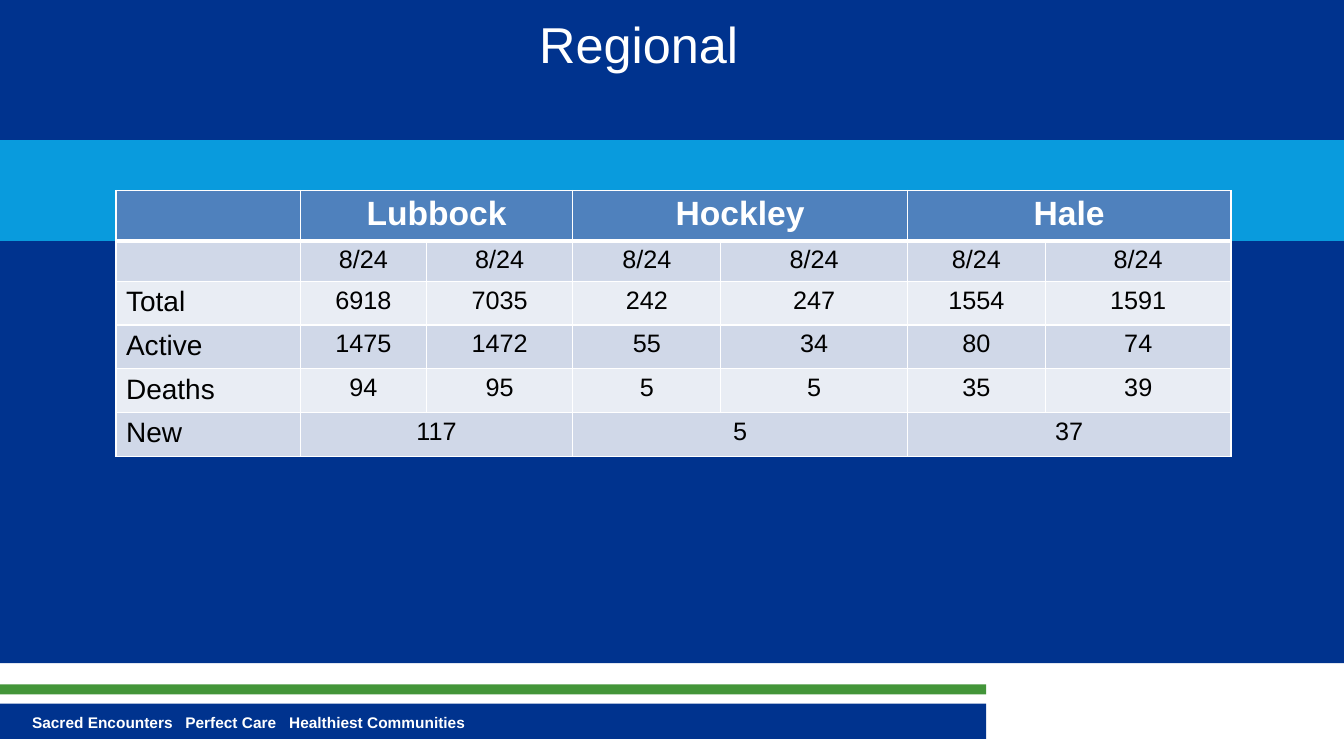
from typing import NamedTuple

from lxml import etree
from pptx import Presentation
from pptx import util as u
from pptx.dml.color import RGBColor
from pptx.enum import shapes, text
from pptx.oxml import ns

NAVY, SKY, GREEN, WHITE, BLACK = "00338E", "099BDD", "439539", "FFFFFF", "000000"
HEADER, BAND_DARK, BAND_LIGHT = "4F81BD", "D0D8E8", "E9EDF4"
CENTER = text.PP_ALIGN.CENTER


class Bar(NamedTuple):
    left: float
    top: float
    width: float
    height: float
    color: str


class Row(NamedTuple):
    label: str
    values: tuple[str, ...]  # one per county when paired, else one per column
    height: float = 0.4
    paired: bool = False


BARS = [
    Bar(0, 0, 13.33, 6.58, NAVY),
    Bar(-0.03, 6.98, 9.81, 0.35, NAVY),
    Bar(-0.03, 6.79, 9.81, 0.1, GREEN),
    Bar(0, 1.39, 13.33, 1, SKY),
]
FOOTER = ("Sacred Encounters", "Perfect Care", "Healthiest Communities")
FOOTER_TABS = (1.52, 2.55)
COL_WIDTHS = (1.83, 1.25, 1.45, 1.47, 1.85, 1.37, 1.84)
ROWS = [
    Row("", ("Lubbock", "Hockley", "Hale"), 0.49, True),
    Row("", ("8/24",) * 6, 0.38),
    Row("Total", ("6918", "7035", "242", "247", "1554", "1591")),
    Row("Active", ("1475", "1472", "55", "34", "80", "74")),
    Row("Deaths", ("94", "95", "5", "5", "35", "39")),
    Row("New", ("117", "5", "37"), paired=True),
]


def rgb(color: str) -> RGBColor:
    return RGBColor.from_string(color)


def write(tf, words: str, *, size: float, color: str = WHITE, bold: bool = False,
          align=text.PP_ALIGN.LEFT, tabs: tuple[float, ...] = ()) -> None:
    p = tf.paragraphs[0]
    p.alignment = align
    if tabs:
        tab_list = etree.SubElement(p._p.get_or_add_pPr(), ns.qn("a:tabLst"))
        for pos in tabs:
            etree.SubElement(tab_list, ns.qn("a:tab"), pos=str(u.Inches(pos)), algn="l")
    r = p.add_run()
    r.text = words
    r.font.name, r.font.size, r.font.bold = "Arial", u.Pt(size), bold
    r.font.color.rgb = rgb(color)


def add_bar(s, bar: Bar) -> None:
    sp = s.shapes.add_shape(shapes.MSO_SHAPE.RECTANGLE, *map(u.Inches, bar[:4]))
    sp.shadow.inherit = False
    sp.fill.solid()
    sp.fill.fore_color.rgb = rgb(bar.color)
    sp.line.fill.background()


def add_text(s, left: float, top: float, width: float, height: float,
             words: str, *, inset: float = 0.05, **fmt) -> None:
    box = s.shapes.add_textbox(*map(u.Inches, (left, top, width, height)))
    tf = box.text_frame
    tf.word_wrap = True
    tf.margin_top = u.Inches(inset)
    write(tf, words, **fmt)


def style_cell(cell, fill: str, top: float, bottom: float) -> None:
    """Fill a cell and give it white borders; top and bottom are in points."""
    cell.fill.solid()
    cell.fill.fore_color.rgb = rgb(fill)
    tc_pr = cell._tc.get_or_add_tcPr()
    sides = (("L", 1), ("R", 1), ("T", top), ("B", bottom))
    for i, (side, width) in enumerate(sides):
        ln = etree.Element(ns.qn(f"a:ln{side}"), w=str(u.Pt(width)))
        solid = etree.SubElement(ln, ns.qn("a:solidFill"))
        etree.SubElement(solid, ns.qn("a:srgbClr"), val=WHITE)
        tc_pr.insert(i, ln)


def add_county_table(s) -> None:
    table = s.shapes.add_table(
        len(ROWS), len(COL_WIDTHS), u.Inches(1.15), u.Inches(1.89),
        u.Inches(sum(COL_WIDTHS)), u.Inches(sum(row.height for row in ROWS))).table
    table.first_row = table.horz_banding = False
    for col, width in zip(table.columns, COL_WIDTHS):
        col.width = u.Inches(width)
    for i, row in enumerate(ROWS):
        table.rows[i].height = u.Inches(row.height)
        is_header = i == 0
        fill = HEADER if is_header else BAND_DARK if i % 2 else BAND_LIGHT
        for j in range(len(COL_WIDTHS)):
            style_cell(table.cell(i, j), fill, 3 if i == 1 else 1, 3 if is_header else 1)
        if row.label:
            write(table.cell(i, 0).text_frame, row.label, size=20, color=BLACK)
        step = 2 if row.paired else 1
        for k, value in enumerate(row.values):
            j = 1 + k * step
            cell = table.cell(i, j)
            if row.paired:
                cell.merge(table.cell(i, j + 1))
            write(cell.text_frame, value, size=24 if is_header else 18, bold=is_header,
                  color=WHITE if is_header else BLACK, align=CENTER)


def main() -> None:
    prs = Presentation()
    prs.slide_width, prs.slide_height = u.Inches(13.33), u.Inches(7.5)
    s = prs.slides.add_slide(prs.slide_layouts[6])
    for bar in BARS:
        add_bar(s, bar)
    add_text(s, 0.22, 7.03, 8.33, 0.29, "\t".join(FOOTER), size=11, bold=True,
             tabs=FOOTER_TABS)
    add_text(s, 0.58, 0.03, 11.51, 1.51, "Regional", inset=0.1, size=36, align=CENTER)
    add_county_table(s)
    prs.save("out.pptx")


if __name__ == "__main__":
    main()
